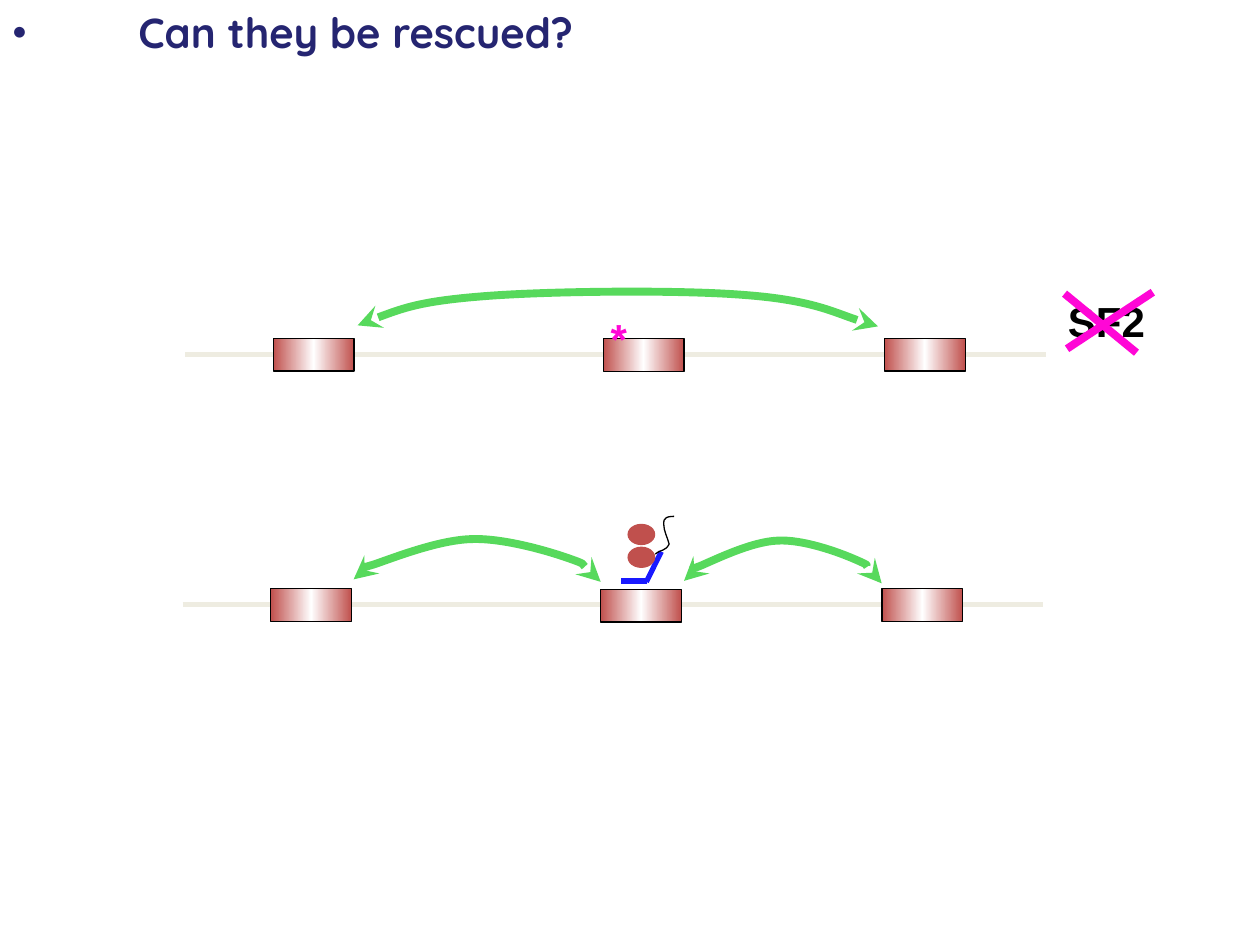
import copy
import pptx
import pptx.dml.color
import pptx.enum.shapes
import pptx.enum.text
import pptx.oxml.ns
import pptx.util
import lxml.etree

Cm = pptx.util.Cm
Pt = pptx.util.Pt
qn = pptx.oxml.ns.qn
SHAPES = pptx.enum.shapes.MSO_SHAPE

RED, WHITE, BLACK = "C0504D", "FFFFFF", "000000"
GREEN, PINK, BLUE = "57D95C", "FF07D6", "1919FF"
RAIL, NAVY = "EEECE1", "252571"

EXON_OFFSETS = [(1.78, -0.32), (8.43, -0.31), (14.1, -0.32)]
LONG_ARC = [(0, 0), (0.63, -0.26), (1.27, -0.49), (2.57, -0.59),
            (3.86, -0.69), (6.5, -0.72), (7.82, -0.61),
            (9.14, -0.51), (10.06, -0.08), (10.49, 0.02)]
SHORT_ARC = [(0, 0), (0, -0.08), (0, -0.18), (0.41, -0.3),
             (0.79, -0.43), (1.7, -0.79), (2.36, -0.81),
             (2.99, -0.84), (3.89, -0.58), (4.32, -0.43),
             (4.75, -0.28), (4.88, -0.03), (4.98, 0.05)]
THREAD = [(0.69, 0.76), (0.81, 0.66), (0.89, 0.71), (0.97, 0.56),
          (0.94, 0.43), (0.86, 0.3), (0.86, 0.15),
          (0.86, 0.1), (0.86, 0.05), (0.91, 0.03),
          (0.94, 0), (1.07, 0), (1.07, 0)]


def rgb(value):
    return pptx.dml.color.RGBColor.from_string(value)


def style_line(item, color, width):
    item.line.color.rgb = rgb(color)
    item.line.width = Pt(width)


def add_segment(page, start, end, color, width):
    ends = [Cm(value) for value in (*start, *end)]
    segment = page.shapes.add_connector(
        pptx.enum.shapes.MSO_CONNECTOR.STRAIGHT, *ends)
    style_line(segment, color, width)
    lxml.etree.SubElement(segment.element.spPr, qn("a:effectLst"))


def add_curve(page, left, top, points, color, width, stretch=1):
    places = [(Cm(left + x * stretch), Cm(top + y)) for x, y in points]
    builder = page.shapes.build_freeform(*places[0])
    builder.add_line_segments(places[1:], close=False)
    curve = builder.convert_to_shape()
    curve.shadow.inherit = False
    curve.fill.background()
    style_line(curve, color, width)
    steps = list(curve.element.iter(qn("a:lnTo")))
    for triple in zip(steps[::3], steps[1::3], steps[2::3]):
        bezier = triple[0].makeelement(qn("a:cubicBezTo"))
        triple[0].addprevious(bezier)
        for step in triple:
            bezier.append(step[0])
            step.getparent().remove(step)
    return curve


def add_arc(page, left, top, points, stretch=1):
    arc = add_curve(page, left, top, points, GREEN, 4.5, stretch)
    outline = arc.element.spPr.find(qn("a:ln"))
    for end in ("a:headEnd", "a:tailEnd"):
        lxml.etree.SubElement(outline, qn(end), type="stealth")


def add_text(page, box, text, color, font):
    label = page.shapes.add_textbox(*[Cm(value) for value in box])
    frame = label.text_frame
    frame.word_wrap = False
    frame.auto_size = pptx.enum.text.MSO_AUTO_SIZE.SHAPE_TO_FIT_TEXT
    span = frame.paragraphs[0].add_run()
    span.text = text
    for name, value in {"name": font, "size": Pt(24), "bold": True}.items():
        setattr(span.font, name, value)
    span.font.color.rgb = rgb(color)
    return label


def add_exon(page, left, top):
    exon = page.shapes.add_shape(
        SHAPES.RECTANGLE, Cm(left), Cm(top), Cm(1.63), Cm(0.66))
    exon.shadow.inherit = False
    style_line(exon, BLACK, 0.75)
    exon.fill.gradient()
    exon.fill.gradient_angle = 0
    first = exon.element.spPr.find(".//" + qn("a:gs"))
    first.addnext(copy.deepcopy(first))
    colors = zip(exon.fill.gradient_stops, (0, 0.5, 1), (RED, WHITE, RED))
    for stop, position, color in colors:
        stop.position = position
        stop.color.rgb = rgb(color)


def add_gene(page, left, top):
    add_segment(page, (left, top), (left + 17.35, top), RAIL, 3)
    for x, y in EXON_OFFSETS:
        add_exon(page, left + x, top + y)


def add_title(page, box):
    label = add_text(page, box, "Can they be rescued?", NAVY, "Quicksand")
    label.text_frame.word_wrap = True
    properties = label.text_frame.paragraphs[0]._p.get_or_add_pPr()
    for name, value in {"marL": Cm(2.54), "indent": -Cm(2.54)}.items():
        properties.set(name, str(int(value)))
    lxml.etree.SubElement(properties, qn("a:buFont"), typeface="Quicksand")
    lxml.etree.SubElement(properties, qn("a:buChar"), char="•")


def add_crossed_factor(page, left, top):
    add_text(page, (left, top, 2.06, 1.27), "SF2", BLACK, "Arial")
    for start, end in [((0.18, 0.08), (1.63, 1.27)),
                       ((0.23, 1.19), (1.96, 0.05))]:
        add_segment(page, (left + start[0], top + start[1]),
                    (left + end[0], top + end[1]), PINK, 4.5)


def add_oligo(page, left, top):
    for start, end in [((0.81, 0.71), (0.51, 1.32)),
                       ((0.53, 1.3), (0, 1.3))]:
        add_segment(page, (left + start[0], top + start[1]),
                    (left + end[0], top + end[1]), BLUE, 3)
    for offset in (0.15, 0.61):
        bead = page.shapes.add_shape(
            SHAPES.OVAL, Cm(left + 0.13), Cm(top + offset), Cm(0.56), Cm(0.43))
        bead.shadow.inherit = False
        bead.fill.solid()
        bead.fill.fore_color.rgb = rgb(RED)
        bead.line.fill.background()
    add_curve(page, left, top, THREAD, BLACK, 0.75)


def add_skipped_row(page, left, top):
    add_gene(page, left, top)
    add_arc(page, left + 3.48, top - 0.58, LONG_ARC)
    add_text(page, (left + 8.33, top - 0.97, 0.84, 1.27), "*", PINK, "Arial")
    add_crossed_factor(page, left + 17.55, top - 1.3)


def add_rescued_row(page, left, top):
    add_gene(page, left, top)
    add_oligo(page, left + 8.84, top - 1.78)
    add_arc(page, left + 3.45, top - 0.51, SHORT_ARC)
    add_arc(page, left + 10.11, top - 0.48, SHORT_ARC, 0.8)


def main():
    deck = pptx.Presentation()
    deck.slide_width, deck.slide_height = Cm(25.4), Cm(19.05)
    page = deck.slides.add_slide(deck.slide_layouts[6])
    add_skipped_row(page, 3.73, 7.14)
    add_rescued_row(page, 3.68, 12.19)
    add_title(page, (0, 0, 12.19, 1.27))
    deck.save("out.pptx")


if __name__ == "__main__":
    main()
